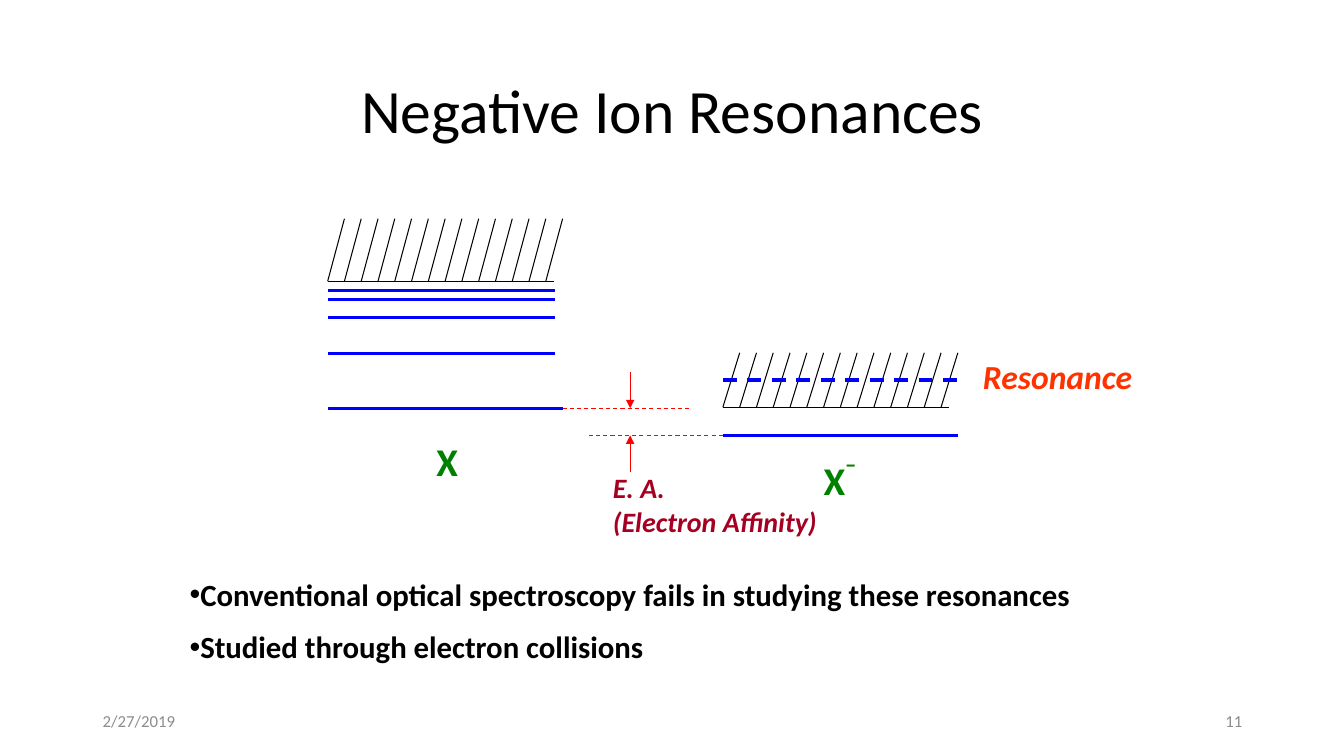
from dataclasses import dataclass

from lxml import etree
from pptx import Presentation
from pptx.dml.color import RGBColor
from pptx.enum.dml import MSO_LINE
from pptx.enum.shapes import MSO_CONNECTOR
from pptx.enum.text import MSO_ANCHOR, MSO_AUTO_SIZE, PP_ALIGN
from pptx.oxml.ns import qn
from pptx.util import Inches, Pt

STRAIGHT = MSO_CONNECTOR.STRAIGHT
DASH = MSO_LINE.DASH
TOP, MIDDLE = MSO_ANCHOR.TOP, MSO_ANCHOR.MIDDLE
LEFT, CENTER, RIGHT = PP_ALIGN.LEFT, PP_ALIGN.CENTER, PP_ALIGN.RIGHT
FIXED, GROW = MSO_AUTO_SIZE.NONE, MSO_AUTO_SIZE.SHAPE_TO_FIT_TEXT


@dataclass(frozen=True)
class Theme:
    font: str = "Calibri"
    ink: str = "000000"
    level: str = "0000FF"
    guide: str = "FF0000"
    species: str = "008000"
    affinity: str = "A50021"
    resonance: str = "FF3300"
    footer: str = "8C8C8C"
    title_size: int = 44
    species_size: int = 28
    resonance_size: int = 24
    bullet_size: int = 22
    affinity_size: int = 20
    footer_size: int = 12
    thin: float = 0.75
    thick: float = 2
    heavy: float = 2.5


@dataclass(frozen=True)
class Box:
    left: float
    top: float
    width: float
    height: float

    def inches(self):
        return [Inches(v) for v in (self.left, self.top, self.width, self.height)]


THEME = Theme()
HATCHES = 14


def style_span(span, size, color, **styles):
    formats = {"name": THEME.font, "size": Pt(size), **styles}
    for name, value in formats.items():
        setattr(span.font, name, value)
    span.font.color.rgb = RGBColor.from_string(color)


def write(shape, lines, size, color, align=LEFT, anchor=TOP, wrap=True,
          fit=FIXED, **styles):
    frame = shape.text_frame
    settings = {"word_wrap": wrap, "auto_size": fit, "vertical_anchor": anchor}
    for name, value in settings.items():
        setattr(frame, name, value)
    for index, line in enumerate(lines):
        para = frame.add_paragraph() if index else frame.paragraphs[0]
        para.alignment = align
        span = para.add_run()
        span.text = line
        style_span(span, size, color, **styles)
    return frame


def add_label(shapes, box, lines, size, color, **options):
    return write(shapes.add_textbox(*box.inches()), lines, size, color, **options)


def place(placeholder, box):
    for name, value in zip(("left", "top", "width", "height"), box.inches()):
        setattr(placeholder, name, value)


def add_line(shapes, start, end, color, width, dash=None, arrow=False):
    line = shapes.add_connector(STRAIGHT, *[Inches(v) for v in (*start, *end)])
    line.line.color.rgb = RGBColor.from_string(color)
    line.line.width = Pt(width)
    if dash is not None:
        line.line.dash_style = dash
    properties = line._element.spPr
    if arrow:
        outline = properties.find(qn("a:ln"))
        etree.SubElement(outline, qn("a:tailEnd"), type="triangle")
    etree.SubElement(properties, qn("a:effectLst"))


def add_level(shapes, left, right, y, width=THEME.thick, dash=None):
    add_line(shapes, (left, y), (right, y), THEME.level, width, dash)


# Hatched continuum: a base line with evenly spaced slanted strokes
def add_continuum(shapes, box):
    step = box.width / HATCHES
    base = box.top + box.height
    add_line(shapes, (box.left, base), (box.left + box.width - step / 2, base),
             THEME.ink, THEME.thin)
    for index in range(HATCHES):
        x = box.left + index * step
        add_line(shapes, (x, base), (x + step, box.top), THEME.ink, THEME.thin)


# Neutral species: ground state, excited states, continuum
def add_neutral(shapes, box):
    right = box.left + box.width
    ground = box.top + box.height
    add_level(shapes, box.left, right, ground)
    for rise in (0.54, 0.9, 1.08, 1.17):
        add_level(shapes, box.left, right - 0.08, ground - rise)
    add_continuum(shapes, Box(box.left, box.top, box.width, 0.62))
    add_label(shapes, Box(box.left + 0.98, ground + 0.24, 0.35, 0.57), ["X"],
              THEME.species_size, THEME.species, fit=GROW, bold=True)


# Negative ion: bound state, continuum, dashed resonance
def add_anion(shapes, box):
    right = box.left + box.width
    ground = box.top + box.height
    add_level(shapes, box.left, right, ground)
    add_continuum(shapes, Box(box.left, box.top, box.width, 0.54))
    add_level(shapes, box.left, right, box.top + 0.27, THEME.heavy, DASH)
    frame = add_label(shapes, Box(box.left + 0.9, ground + 0.09, 0.6, 0.57), ["X"],
                      THEME.species_size, THEME.species, fit=GROW, bold=True)
    charge = frame.paragraphs[0].add_run()
    charge.text = "–"
    style_span(charge, THEME.species_size, THEME.species, bold=True)
    charge._r.get_or_add_rPr().set("baseline", "60000")
    add_label(shapes, Box(right + 0.15, box.top - 0.02, 1.68, 0.5), ["Resonance"],
              THEME.resonance_size, THEME.resonance, wrap=False, fit=GROW,
              bold=True, italic=True)


# Electron affinity: gap between the two ground states
def add_affinity(shapes, box):
    right, bottom = box.left + box.width, box.top + box.height
    middle = box.left + 0.67
    add_line(shapes, (box.left, box.top), (right - 0.34, box.top),
             THEME.guide, THEME.thin, DASH)
    add_line(shapes, (right, bottom), (box.left + 0.25, bottom),
             THEME.guide, THEME.thin, DASH)
    for tip, offset in ((box.top, -0.36), (bottom, 0.36)):
        add_line(shapes, (middle, tip + offset), (middle, tip),
                 THEME.guide, THEME.thin, arrow=True)
    add_label(shapes, Box(box.left + 0.4, bottom + 0.3, 2.33, 0.77),
              ["E. A.", "(Electron Affinity)"], THEME.affinity_size,
              THEME.affinity, wrap=False, fit=GROW, bold=True, italic=True)


def add_title(page, box):
    title = page.shapes.title
    place(title, box)
    frame = write(title, ["Negative Ion Resonances"], THEME.title_size, THEME.ink,
                  align=CENTER, anchor=MIDDLE)
    frame.paragraphs[0].line_spacing = 0.9


def add_bullets(page, box):
    body = page.placeholders[1]
    place(body, box)
    frame = write(body, ["Conventional optical spectroscopy fails in studying these resonances",
                         "Studied through electron collisions"],
                  THEME.bullet_size, THEME.ink, bold=True)
    for para in frame.paragraphs:
        para.space_before = Pt(THEME.bullet_size / 2)
        properties = para._p.get_or_add_pPr()
        for name in ("marL", "indent"):
            properties.set(name, "0")
        etree.SubElement(properties, qn("a:buChar"), char="•")


def add_footer(page, box):
    width = 3
    cells = ((box.left, "2/27/2019", LEFT),
             (box.left + box.width - width, "11", RIGHT))
    for left, text, align in cells:
        add_label(page.shapes, Box(left, box.top, width, box.height), [text],
                  THEME.footer_size, THEME.footer, align=align, anchor=MIDDLE)


def main():
    deck = Presentation()
    deck.slide_width, deck.slide_height = Inches(13.33), Inches(7.5)
    page = deck.slides.add_slide(deck.slide_layouts[1])
    add_title(page, Box(0.92, 0.4, 11.5, 1.45))
    diagram = page.shapes.add_group_shape().shapes
    add_neutral(diagram, Box(3.25, 2.17, 2.33, 1.88))
    add_affinity(diagram, Box(5.58, 4.05, 1.59, 0.27))
    add_anion(diagram, Box(7.17, 3.5, 2.33, 0.82))
    add_bullets(page, Box(1.78, 5.66, 9.76, 1.03))
    add_footer(page, Box(0.92, 6.95, 11.5, 0.4))
    deck.save("out.pptx")


if __name__ == "__main__":
    main()
